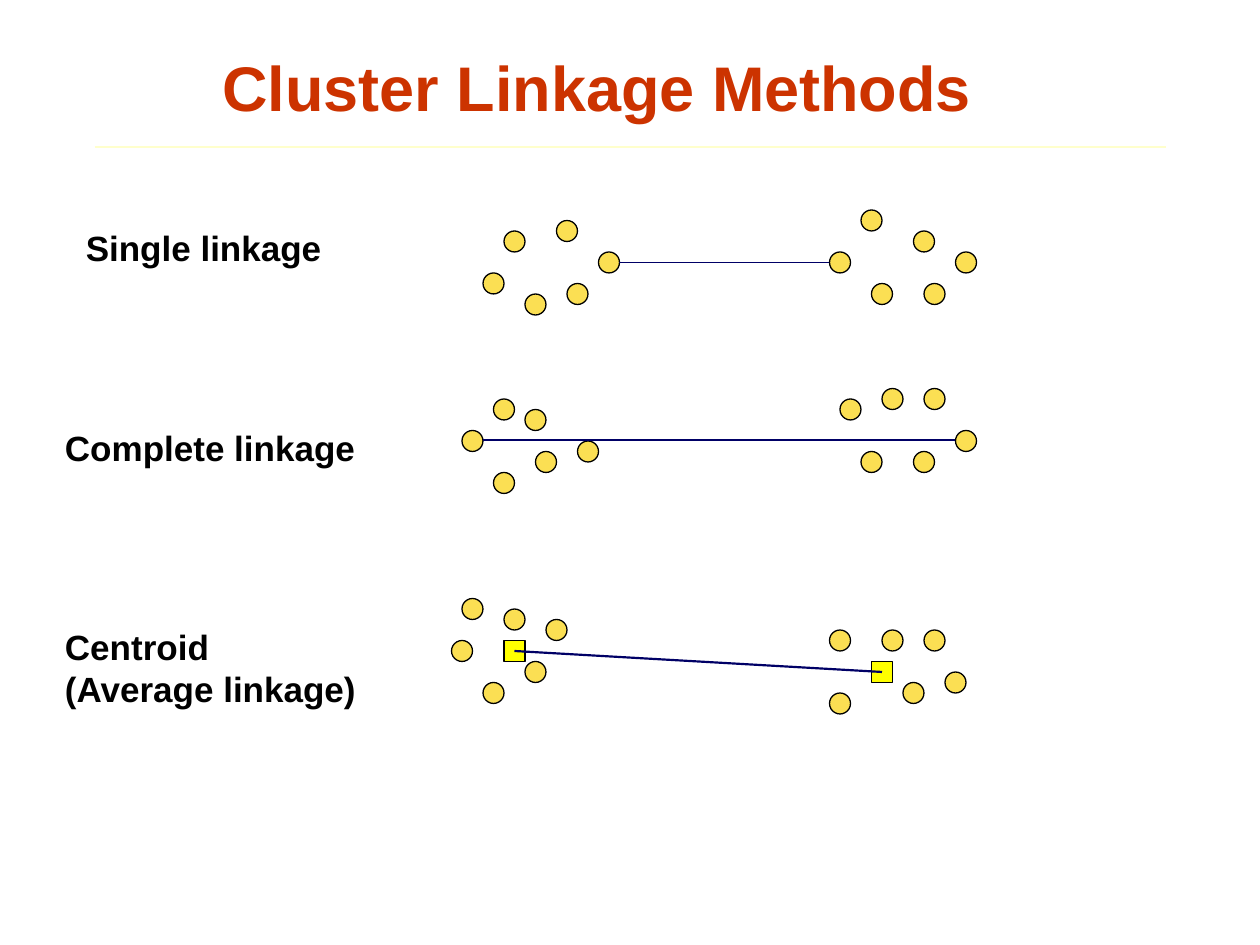
from lxml.etree import SubElement
from pptx import Presentation
from pptx.dml.color import RGBColor
from pptx.enum.shapes import MSO_CONNECTOR, MSO_SHAPE
from pptx.enum.text import MSO_ANCHOR, MSO_AUTO_SIZE, PP_ALIGN
from pptx.oxml.ns import qn
from pptx.util import Cm, Pt

RED = RGBColor(0xCC, 0x33, 0x00)
CREAM = RGBColor(0xFF, 0xFF, 0xCC)
GOLD = RGBColor(0xFB, 0xDF, 0x53)
YELLOW = RGBColor(0xFF, 0xFF, 0x00)
NAVY = RGBColor(0x00, 0x00, 0x66)
BLACK = RGBColor(0x00, 0x00, 0x00)

UNIT = 2.54 / 12  # grid step in cm; marks are two steps wide

deck = Presentation()
deck.slide_width, deck.slide_height = Cm(25.4), Cm(19.05)
slide = deck.slides.add_slide(deck.slide_layouts[5])
shapes = slide.shapes


def write(box, place, text, size, color, wrap):
    """Place a text shape and give it bold left-aligned text."""
    for name, value in zip(("left", "top", "width", "height"), place):
        setattr(box, name, Cm(value))
    frame = box.text_frame
    frame.text = text
    style = {"word_wrap": wrap, "vertical_anchor": MSO_ANCHOR.TOP,
             "auto_size": MSO_AUTO_SIZE.SHAPE_TO_FIT_TEXT}
    for name, value in style.items():
        setattr(frame, name, value)
    line = frame.paragraphs[0]
    line.alignment = PP_ALIGN.LEFT
    font = line.runs[0].font
    for name, value in {"name": "Arial", "size": Pt(size), "bold": True}.items():
        setattr(font, name, value)
    font.color.rgb = color


write(shapes.title, (4.23, 0.85, 15.75, 1.8), "Cluster Linkage Methods", 36, RED, False)

labels = [
    ("Single linkage", (1.48, 4.45, 5.5, 1.11)),
    ("Complete linkage", (1.06, 8.47, 6.56, 1.11)),
    ("Centroid (Average linkage)", (1.06, 12.49, 6.56, 1.96)),
]
for text, place in labels:
    write(shapes.add_textbox(0, 0, 0, 0), place, text, 20, BLACK, True)

# Left and top of each mark, in grid steps
single = [(50, 28), (53, 21), (54, 27), (46, 26), (57, 24), (48, 22),
          (82, 20), (83, 27), (87, 22), (79, 24), (88, 27), (91, 24)]
complete = [(50, 39), (55, 42), (47, 45), (44, 41), (51, 43), (47, 38),
            (84, 37), (88, 37), (82, 43), (80, 38), (87, 43), (91, 41)]
centroid = [(48, 58), (52, 59), (46, 65), (43, 61), (50, 63), (44, 57),
            (79, 66), (84, 60), (86, 65), (79, 60), (90, 64), (88, 60)]
means = [(48, 61), (83, 63)]

marks = [(MSO_SHAPE.OVAL, GOLD, single + complete + centroid),
         (MSO_SHAPE.RECTANGLE, YELLOW, means)]
for kind, color, spots in marks:
    for x, y in spots:
        mark = shapes.add_shape(kind, Cm(x * UNIT), Cm(y * UNIT),
                                Cm(2 * UNIT), Cm(2 * UNIT))
        mark.shadow.inherit = False
        mark.fill.solid()
        mark.fill.fore_color.rgb = color
        mark.line.color.rgb = BLACK
        mark.line.width = Pt(0.75)

# Ends in grid steps, colour, width
lines = [
    ((9, 14, 111, 14), CREAM, 0.75),
    ((79, 25, 59, 25), NAVY, 1),
    ((91, 41.9, 46, 41.9), NAVY, 1.25),
    ((84, 64, 49, 62), NAVY, 1.25),
]
for ends, color, width in lines:
    link = shapes.add_connector(MSO_CONNECTOR.STRAIGHT, *(Cm(n * UNIT) for n in ends))
    link.line.color.rgb = color
    link.line.width = Pt(width)
    SubElement(link._element.spPr, qn("a:effectLst"))

deck.save("out.pptx")
